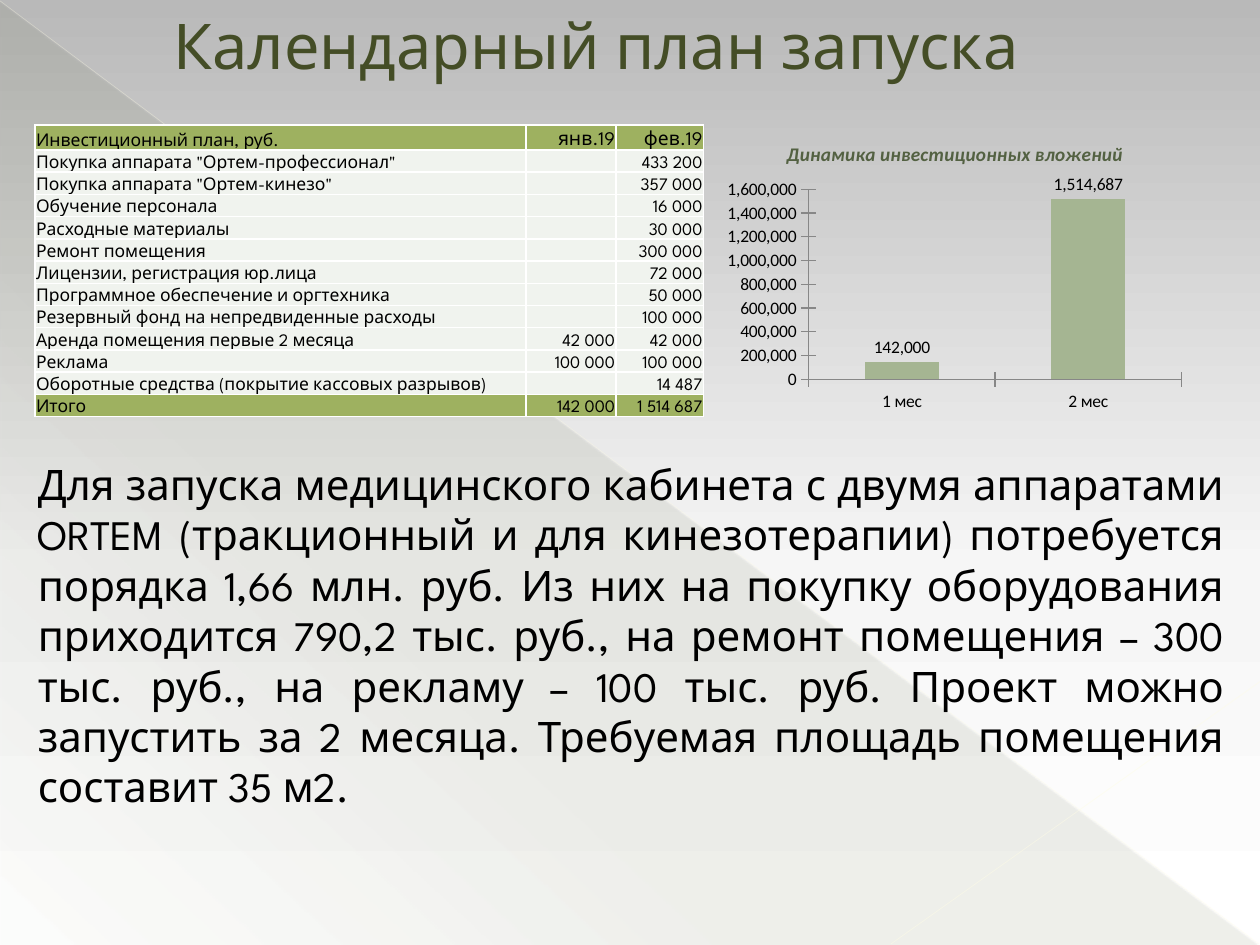
from dataclasses import dataclass

from lxml.etree import SubElement
from pptx import Presentation
from pptx.chart.data import CategoryChartData
from pptx.dml.color import RGBColor
from pptx.enum.chart import XL_CHART_TYPE, XL_LABEL_POSITION, XL_TICK_MARK
from pptx.enum.shapes import MSO_CONNECTOR, MSO_SHAPE
from pptx.enum.text import MSO_ANCHOR, PP_ALIGN
from pptx.oxml import parse_xml
from pptx.oxml.ns import nsdecls, qn
from pptx.util import Pt


@dataclass(frozen=True)
class Theme:
    text_font: str = "League Spartan"
    chart_font: str = "Calibri"
    black: str = "000000"
    white: str = "FFFFFF"
    olive: str = "444D26"
    table_accent: str = "9EB160"
    table_body: str = "F0F3EE"
    chart_title: str = "536142"
    column: str = "A5B592"
    axis: str = "878787"
    title_size: int = 36
    body_size: int = 24
    table_size: int = 10
    month_size: int = 11
    chart_size: int = 10
    chart_title_size: int = 11


theme = Theme()


def style_font(font, name, size, color):
    font.name = name
    font.size = Pt(size)
    font.color.rgb = RGBColor.from_string(color)


def gradient(stops, angle):
    stop_xml = "".join(
        f'<a:gs pos="{position * 1000}"><a:srgbClr val="{color}">'
        f'<a:alpha val="{alpha * 1000}"/></a:srgbClr></a:gs>'
        for position, color, alpha in stops
    )
    return parse_xml(
        f'<a:gradFill {nsdecls("a")} rotWithShape="1"><a:gsLst>{stop_xml}</a:gsLst>'
        f'<a:lin ang="{angle * 60000}" scaled="0"/></a:gradFill>'
    )


presentation = Presentation()
presentation.slide_width = Pt(720)
presentation.slide_height = Pt(540)
slide = presentation.slides.add_slide(presentation.slide_layouts[5])

background_fill = slide.background.fill
background_fill.solid()
solid_fill = slide.element.find(".//" + qn("p:bgPr")).find(qn("a:solidFill"))
solid_fill.getparent().replace(
    solid_fill,
    gradient([(0, "B9B9B9", 100), (60, "F6F6F6", 100), (100, "FFFFFF", 100)], 90),
)

triangle = slide.shapes.add_shape(MSO_SHAPE.RIGHT_TRIANGLE, Pt(0.5), Pt(1.5), Pt(718.5), Pt(538.5))
triangle.shadow.inherit = False
triangle.line.fill.background()
triangle.fill.solid()
triangle_fill = triangle.element.spPr.find(qn("a:solidFill"))
triangle.element.spPr.replace(
    triangle_fill,
    gradient([(0, theme.olive, 10), (70, theme.olive, 8), (100, theme.olive, 1)], 133),
)

for start_x, start_y, end_x, end_y, color, width, opacity in [
    (0, 0.5, 719.5, 539.5, "FFFDE3", 0.39, 35),
    (720, 389.5, 509, 539.5, "FFFDE6", 0.47, 45),
]:
    line = slide.shapes.add_connector(
        MSO_CONNECTOR.STRAIGHT, Pt(start_x), Pt(start_y), Pt(end_x), Pt(end_y)
    )
    line.line.color.rgb = RGBColor.from_string(color)
    line.line.width = Pt(width)
    line_color = line.element.spPr.find(".//" + qn("a:srgbClr"))
    SubElement(line_color, qn("a:alpha")).set("val", str(opacity * 1000))
    SubElement(line.element.spPr, qn("a:effectLst"))

title = slide.shapes.title
title.left, title.top, title.width, title.height = Pt(54), Pt(0), Pt(648), Pt(51)
title.text_frame.vertical_anchor = MSO_ANCHOR.MIDDLE
paragraph = title.text_frame.paragraphs[0]
paragraph.alignment = PP_ALIGN.LEFT
paragraph_properties = paragraph._p.get_or_add_pPr()
paragraph_properties.set("marL", str(Pt(38)))
paragraph_properties.set("indent", "0")
run = paragraph.add_run()
run.text = "Календарный план запуска"
style_font(run.font, theme.text_font, theme.title_size, theme.olive)

summary = slide.shapes.add_textbox(Pt(14.5), Pt(258.5), Pt(692), Pt(240))
summary.text_frame.word_wrap = True
paragraph = summary.text_frame.paragraphs[0]
paragraph.alignment = PP_ALIGN.JUSTIFY
run = paragraph.add_run()
run.text = (
    "Для запуска медицинского кабинета с двумя аппаратами ORTEM (тракционный и для "
    "кинезотерапии) потребуется порядка 1,66 млн. руб. Из них на покупку оборудования "
    "приходится 790,2 тыс. руб., на ремонт помещения – 300 тыс. руб., на рекламу – "
    "100 тыс. руб. Проект можно запустить за 2 месяца. Требуемая площадь помещения "
    "составит 35 м2."
)
style_font(run.font, theme.text_font, theme.body_size, theme.black)

investments = [
    ("Инвестиционный план, руб.", "янв.19", "фев.19"),
    ('Покупка аппарата "Ортем-профессионал"', "", "433 200"),
    ('Покупка аппарата "Ортем-кинезо"', "", "357 000"),
    ("Обучение персонала", "", "16 000"),
    ("Расходные материалы", "", "30 000"),
    ("Ремонт помещения", "", "300 000"),
    ("Лицензии, регистрация юр.лица", "", "72 000"),
    ("Программное обеспечение и оргтехника", "", "50 000"),
    ("Резервный фонд на непредвиденные расходы", "", "100 000"),
    ("Аренда помещения первые 2 месяца", "42 000", "42 000"),
    ("Реклама", "100 000", "100 000"),
    ("Оборотные средства (покрытие кассовых разрывов)", "", "14 487"),
    ("Итого", "142 000", "1 514 687"),
]
last_row = len(investments) - 1
table = slide.shapes.add_table(
    len(investments), 3, Pt(20), Pt(71.5), Pt(382), Pt(167)
).table
for column, width in zip(table.columns, (280.5, 51.5, 50)):
    column.width = Pt(width)
for row_index, values in enumerate(investments):
    table.rows[row_index].height = Pt(14.2 if row_index == 0 else 12.7)
    for column_index, value in enumerate(values):
        cell = table.cell(row_index, column_index)
        cell.margin_left = cell.margin_right = cell.margin_top = Pt(0.6)
        cell.margin_bottom = Pt(0)
        cell.vertical_anchor = MSO_ANCHOR.BOTTOM
        cell.fill.solid()
        cell.fill.fore_color.rgb = RGBColor.from_string(
            theme.table_accent if row_index in (0, last_row) else theme.table_body
        )
        cell_properties = cell._tc.get_or_add_tcPr()
        for position, side in enumerate(("lnL", "lnR", "lnT", "lnB")):
            cell_properties.insert(position, parse_xml(
                f'<a:{side} {nsdecls("a")} w="{Pt(1)}"><a:solidFill>'
                f'<a:srgbClr val="{theme.white}"/></a:solidFill></a:{side}>'
            ))
        paragraph = cell.text_frame.paragraphs[0]
        paragraph.alignment = PP_ALIGN.RIGHT if column_index else PP_ALIGN.LEFT
        if value:
            run = paragraph.add_run()
            run.text = value
            is_month = row_index == 0 and column_index > 0
            size = theme.month_size if is_month else theme.table_size
            style_font(run.font, theme.text_font, size, theme.black)
        else:
            end_properties = SubElement(paragraph._p, qn("a:endParaRPr"))
            end_properties.set("sz", str(theme.table_size * 100))

chart_data = CategoryChartData(number_format="#,##0")
chart_data.categories = ["1 мес", "2 мес"]
chart_data.add_series("Series 1", (142000, 1514687))
chart = slide.shapes.add_chart(
    XL_CHART_TYPE.COLUMN_CLUSTERED, Pt(411), Pt(71.5), Pt(269.5), Pt(167), chart_data
).chart
chart.has_legend = False
style_font(chart.font, theme.chart_font, theme.chart_size, theme.black)

chart.has_title = True
run = chart.chart_title.text_frame.paragraphs[0].add_run()
run.text = "Динамика инвестиционных вложений"
style_font(run.font, theme.chart_font, theme.chart_title_size, theme.chart_title)
run.font.bold = True
run.font.italic = True
chart.chart_title.include_in_layout = False

for axis in (chart.category_axis, chart.value_axis):
    axis.has_major_gridlines = False
    axis.major_tick_mark = XL_TICK_MARK.CROSS
    axis.minor_tick_mark = XL_TICK_MARK.NONE
    axis.format.line.color.rgb = RGBColor.from_string(theme.axis)
    style_font(axis.tick_labels.font, theme.chart_font, theme.chart_size, theme.black)
chart.value_axis.minimum_scale = 0
chart.value_axis.maximum_scale = 1600000
chart.value_axis.major_unit = 200000
chart.value_axis.tick_labels.number_format = "#,##0"
chart.value_axis.tick_labels.number_format_is_linked = False

plot = chart.plots[0]
plot.gap_width = 150
plot.vary_by_categories = False
series = plot.series[0]
series.format.fill.solid()
series.format.fill.fore_color.rgb = RGBColor.from_string(theme.column)
labels = series.data_labels
labels.show_value = True
labels.position = XL_LABEL_POSITION.OUTSIDE_END
labels.number_format = "#,##0"
labels.number_format_is_linked = False
style_font(labels.font, theme.chart_font, theme.chart_size, theme.black)

plot_area = chart.element.find(".//" + qn("c:plotArea"))
for layout in plot_area.findall(qn("c:layout")):
    plot_area.remove(layout)
plot_area.insert(0, parse_xml(
    f'<c:layout {nsdecls("c")}><c:manualLayout><c:layoutTarget val="inner"/>'
    '<c:xMode val="edge"/><c:yMode val="edge"/><c:x val="0.19"/><c:y val="0.22"/>'
    '<c:w val="0.79"/><c:h val="0.65"/></c:manualLayout></c:layout>'
))

presentation.save("out.pptx")
